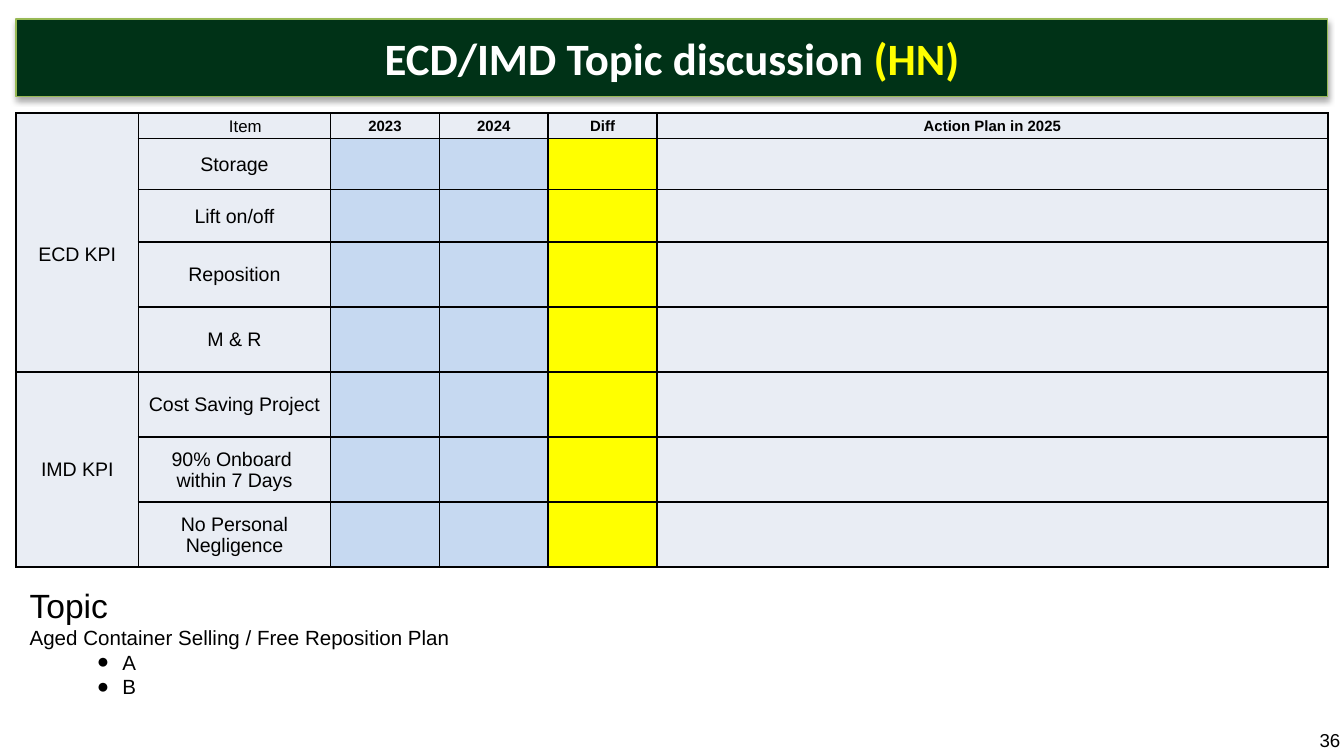
from dataclasses import dataclass
from itertools import product

from lxml.etree import SubElement
from pptx import Presentation
from pptx.dml.color import RGBColor
from pptx.enum.text import MSO_ANCHOR as Anchor, MSO_AUTO_SIZE as AutoSize, PP_ALIGN as Align
from pptx.oxml import parse_xml
from pptx.oxml.ns import nsdecls, qn
from pptx.util import Emu, Inches, Pt


@dataclass(frozen=True)
class Theme:
    heading_font: str = "Calibri"
    font: str = "Arial"
    dark: str = "003217"
    edge: str = "98B955"
    ink: str = "000000"
    white: str = "FFFFFF"
    accent: str = "FFFF00"
    pale: str = "E9EDF4"
    blue: str = "C6D9F1"
    title: float = 24
    topic: float = 18
    text: float = 11
    cell: float = 10.5
    item: float = 9
    head: float = 8
    number: float = 10


@dataclass(frozen=True)
class Group:
    name: str
    items: tuple[str, ...]
    top_inset: float = 0.01


@dataclass(frozen=True)
class Line:
    text: str
    size: float
    bullet: bool = False


T = Theme()
WIDTH = 10
HEIGHT = WIDTH * 9 / 16
MARGIN = 0.012 * WIDTH
FULL = WIDTH - 2 * MARGIN
TABLE_HEIGHT = 3.38
COLS = (0.91, 1.43, 0.81, 0.81, 0.81, 4.99)
TOP_ROWS = (0.19, 0.38, 0.39)
ROWS = TOP_ROWS + ((TABLE_HEIGHT - sum(TOP_ROWS)) / 5,) * 5
HEADERS = ("Item", "2023", "2024", "Diff", "Action Plan in 2025")
FILLS = (T.pale, T.pale, T.blue, T.blue, T.accent, T.pale)
GROUPS = (
    Group("ECD KPI", ("Storage", "Lift on/off", "Reposition", "M & R"), top_inset=0.18),
    Group("IMD KPI", ("Cost Saving Project", "90% Onboard \nwithin 7 Days",
                      "No Personal Negligence")),
)
TOPICS = (
    Line("Topic", T.topic),
    Line("Aged Container Selling / Free Reposition Plan", T.text),
    Line("A", T.text, bullet=True),
    Line("B", T.text, bullet=True),
)


def add_text(p, text: str, *, size: float, font: str = T.font, color: str = T.ink,
             bold: bool = False, align: Align = Align.LEFT) -> None:
    p.alignment = align
    r = p.add_run()
    r.text = text
    r.font.name, r.font.size, r.font.bold = font, Pt(size), bold
    r.font.color.rgb = RGBColor.from_string(color)


def place(sp, left: float, top: float, width: float, height: float) -> None:
    sp.left, sp.top, sp.width, sp.height = map(Inches, (left, top, width, height))


def set_insets(box, left: float, top: float, right: float, bottom: float) -> None:
    box.margin_left, box.margin_top = Inches(left), Inches(top)
    box.margin_right, box.margin_bottom = Inches(right), Inches(bottom)


def add_shadow(sp) -> None:
    sp._element.spPr.append(parse_xml(
        f'<a:effectLst {nsdecls("a")}>'
        f'<a:outerShdw blurRad="{Pt(3.1)}" dist="{Pt(1.8)}" dir="5400000" rotWithShape="0">'
        f'<a:srgbClr val="{T.ink}"><a:alpha val="35000"/></a:srgbClr>'
        '</a:outerShdw></a:effectLst>'))


def add_banner(sp) -> None:
    place(sp, MARGIN, 0.14, FULL, 0.58)
    sp.fill.solid()
    sp.fill.fore_color.rgb = RGBColor.from_string(T.dark)
    sp.line.color.rgb = RGBColor.from_string(T.edge)
    sp.line.width = Pt(0.75)
    add_shadow(sp)
    tf = sp.text_frame
    tf.auto_size, tf.vertical_anchor = AutoSize.NONE, Anchor.MIDDLE
    set_insets(tf, 0, 0, 0, 0)
    for text, color in (("ECD/IMD Topic discussion ", T.white), ("(HN)", T.accent)):
        add_text(tf.paragraphs[0], text, size=T.title, font=T.heading_font,
                 color=color, bold=True, align=Align.CENTER)


def style_cell(cell, fill: str) -> None:
    cell.fill.solid()
    cell.fill.fore_color.rgb = RGBColor.from_string(fill)
    cell.vertical_anchor = Anchor.MIDDLE
    set_insets(cell, 0.01, 0.01, 0.01, 0)
    for i, side in enumerate("LRTB"):
        cell._tc.get_or_add_tcPr().insert(i, parse_xml(
            f'<a:ln{side} {nsdecls("a")} w="{Pt(1)}"><a:solidFill>'
            f'<a:srgbClr val="{T.ink}"/></a:solidFill></a:ln{side}>'))


def write_cell(cell, text: str, size: float = T.cell, bold: bool = False) -> None:
    tf = cell.text_frame
    for i, line in enumerate(text.split("\n")):
        p = tf.add_paragraph() if i else tf.paragraphs[0]
        add_text(p, line, size=size, bold=bold, align=Align.CENTER)


def add_kpi_table(s) -> None:
    table = s.shapes.add_table(len(ROWS), len(COLS), Inches(MARGIN), Inches(0.84),
                               Inches(sum(COLS)), Inches(TABLE_HEIGHT)).table
    for col, width in zip(table.columns, COLS):
        col.width = Inches(width)
    for row, height in zip(table.rows, ROWS):
        row.height = Inches(height)
    for r, c in product(range(len(ROWS)), range(len(COLS))):
        style_cell(table.cell(r, c), FILLS[c] if r else T.pale)

    for c, text in enumerate(HEADERS, 1):
        first = c == 1
        write_cell(table.cell(0, c), text, T.item if first else T.head, bold=not first)
    table.cell(0, 1).margin_left = Inches(0.17)

    start, row = 0, 1
    for group in GROUPS:
        for item in group.items:
            write_cell(table.cell(row, 1), item)
            row += 1
        cell = table.cell(start, 0)
        cell.merge(table.cell(row - 1, 0))
        cell.margin_top = Inches(group.top_inset)
        write_cell(cell, group.name)
        start = row


def add_topics(sp) -> None:
    place(sp, MARGIN, 4.3, FULL, HEIGHT - 4.3)
    tf = sp.text_frame
    tf.auto_size, tf.vertical_anchor = AutoSize.NONE, Anchor.TOP
    set_insets(tf, 0.1, 0.05, 0.1, 0.05)
    for i, line in enumerate(TOPICS):
        p = tf.add_paragraph() if i else tf.paragraphs[0]
        p.level = int(line.bullet)
        p.space_before = Pt(0)
        add_text(p, line.text, size=line.size)
        pPr = p._p.get_or_add_pPr()
        left, indent = (0.69, -0.19) if line.bullet else (0, 0)
        pPr.set("marL", str(Inches(left)))
        pPr.set("indent", str(Inches(indent)))
        if line.bullet:
            SubElement(pPr, qn("a:buFont"), typeface=T.font)
            SubElement(pPr, qn("a:buChar"), char="●")
        else:
            SubElement(pPr, qn("a:buNone"))


def add_page_number(s, number: int) -> None:
    width, height = 0.28, 0.23
    sp = s.shapes.add_textbox(Emu(0), Emu(0), Emu(0), Emu(0))
    place(sp, WIDTH - width, HEIGHT - height, width, height)
    tf = sp.text_frame
    tf.word_wrap, tf.vertical_anchor = True, Anchor.MIDDLE
    set_insets(tf, 0.1, 0.05, 0, 0.05)
    add_text(tf.paragraphs[0], str(number), size=T.number)


def main() -> None:
    prs = Presentation()
    prs.slide_width, prs.slide_height = Inches(WIDTH), Inches(HEIGHT)
    s = prs.slides.add_slide(prs.slide_layouts[1])
    add_banner(s.shapes.title)
    add_kpi_table(s)
    add_topics(s.placeholders[1])
    add_page_number(s, 36)
    prs.save("out.pptx")


if __name__ == "__main__":
    main()
